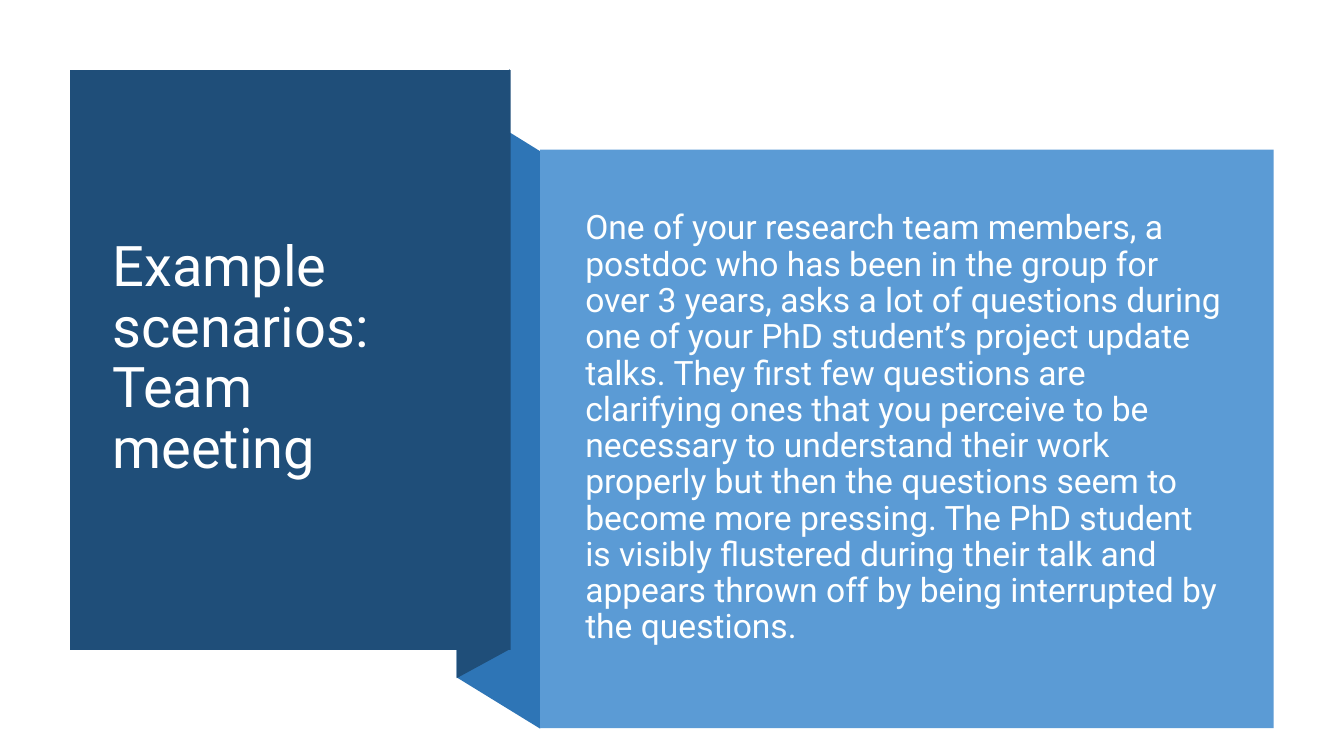
from pptx import Presentation
from pptx.dml.color import RGBColor
from pptx.enum.shapes import MSO_SHAPE
from pptx.enum.text import MSO_ANCHOR, PP_ALIGN
from pptx.util import Cm, Pt

NAVY = RGBColor(0x1F, 0x4E, 0x79)
MID_BLUE = RGBColor(0x2E, 0x75, 0xB6)
LIGHT_BLUE = RGBColor(0x5B, 0x9B, 0xD5)
WHITE = RGBColor(0xFF, 0xFF, 0xFF)
OFF_WHITE = RGBColor(0xFE, 0xFF, 0xFF)

TITLE = "Example scenarios: Team meeting"
SCENARIO = (
    "One of your research team members, a postdoc who has been in the group "
    "for over 3 years, asks a lot of questions during one of your PhD "
    "student’s project update talks. They first few questions are clarifying "
    "ones that you perceive to be necessary to understand their work properly "
    "but then the questions seem to become more pressing. The PhD student is "
    "visibly flustered during their talk and appears thrown off by being "
    "interrupted by the questions."
)


def paint(shape, color):
    shape.shadow.inherit = False
    shape.fill.solid()
    shape.fill.fore_color.rgb = color
    shape.line.fill.background()


def add_text(page, area, text, size, color, space_before):
    box = page.shapes.add_textbox(*[Cm(length) for length in area])
    frame = box.text_frame
    frame.word_wrap = True
    frame.vertical_anchor = MSO_ANCHOR.MIDDLE
    para = frame.paragraphs[0]
    para.alignment = PP_ALIGN.LEFT
    para.line_spacing = 0.9
    para.space_before = Pt(space_before)
    span = para.add_run()
    span.text = text
    span.font.name = "Roboto"
    span.font.size = Pt(size)
    span.font.color.rgb = color


deck = Presentation()
deck.slide_width = Cm(33.87)
deck.slide_height = Cm(19.05)
page = deck.slides.add_slide(deck.slide_layouts[6])

ribbon_folds = [
    ([(13.61, 18.36), (11.51, 17.07), (11.51, 2.51), (13.61, 3.81)], MID_BLUE),
    ([(12.85, 16.36), (11.51, 17.09), (11.51, 2.49), (12.85, 1.75)], NAVY),
]
for corners, color in ribbon_folds:
    points = [(Cm(x), Cm(y)) for x, y in corners]
    outline = page.shapes.build_freeform(*points[0])
    outline.add_line_segments(points[1:], close=True)
    paint(outline.convert_to_shape(), color)

panels = [
    ((1.77, 1.77, 11.1, 14.61), NAVY),
    ((13.61, 3.77, 18.49, 14.58), LIGHT_BLUE),
]
for area, color in panels:
    panel = page.shapes.add_shape(
        MSO_SHAPE.RECTANGLE, *[Cm(length) for length in area]
    )
    paint(panel, color)

add_text(page, (2.59, 2.72, 9.42, 12.67), TITLE, 40, WHITE, 0)
add_text(page, (14.5, 4.78, 16.54, 12.04), SCENARIO, 24, OFF_WHITE, 10)

deck.save("out.pptx")
